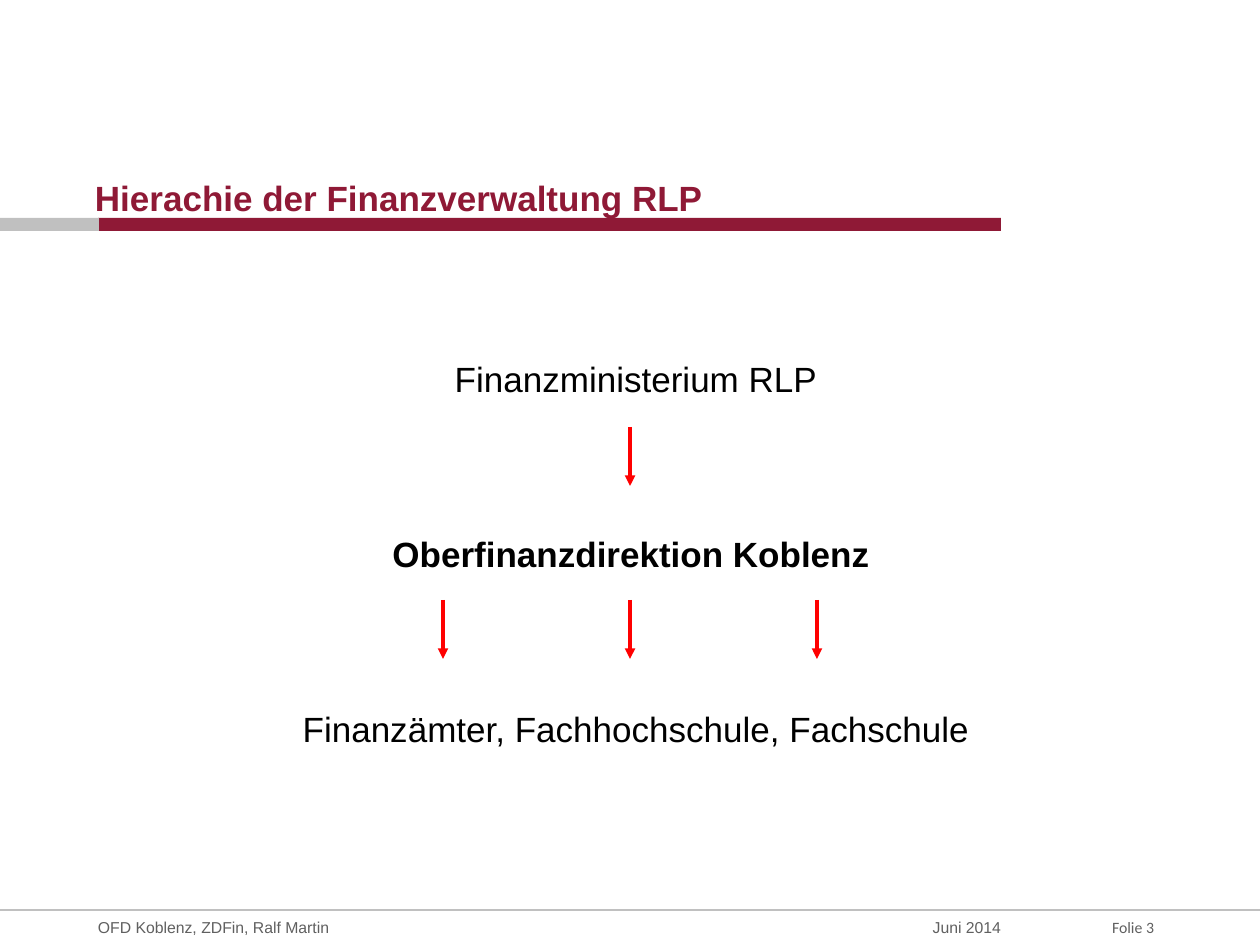
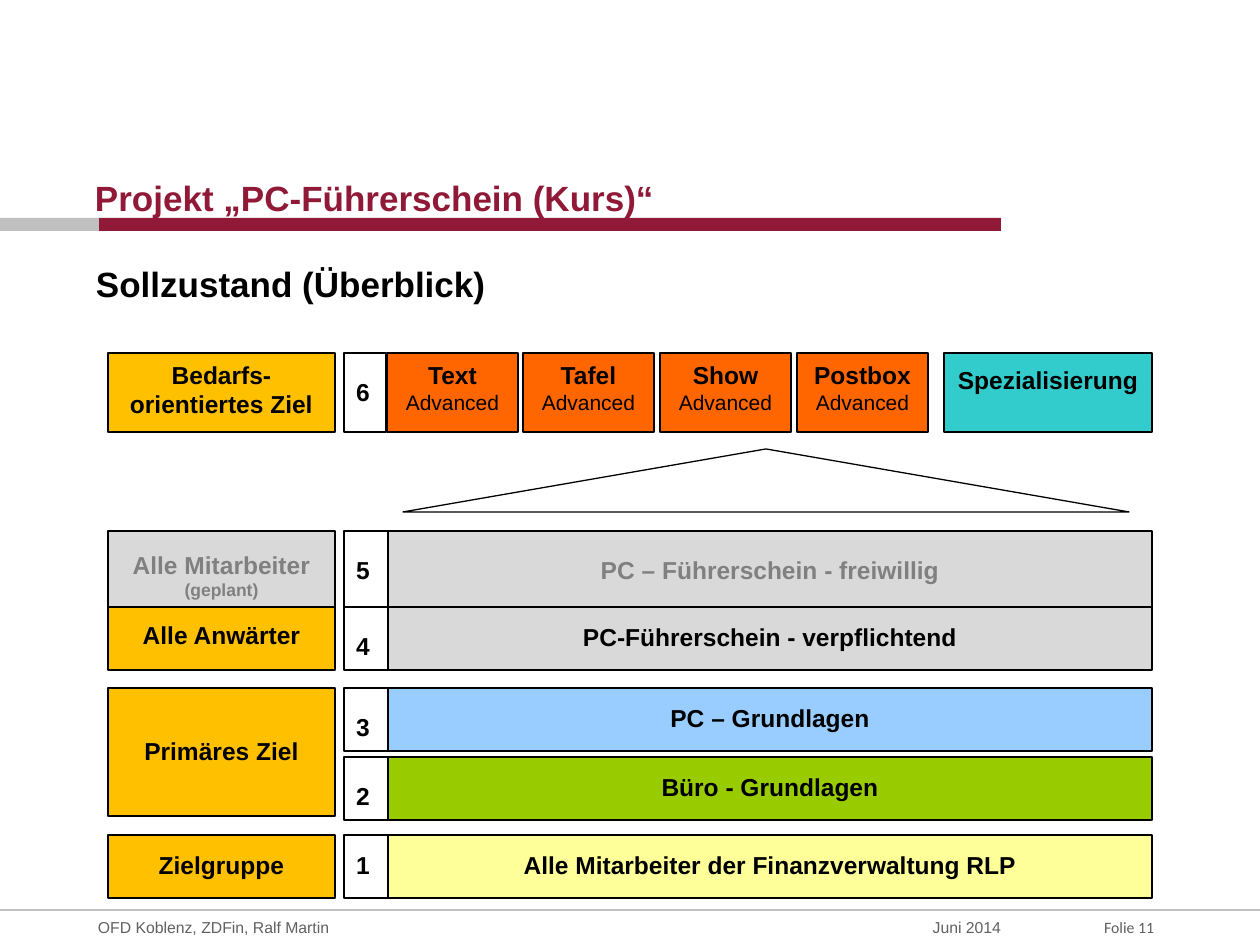
"""Builds two slides on the Rhineland tax office and its computer licence plan."""
import dataclasses

import lxml.etree
import pptx
import pptx.dml.color
import pptx.enum.shapes
import pptx.enum.text
import pptx.oxml.ns
import pptx.util

ALIGN = pptx.enum.text.PP_ALIGN
ANCHOR = pptx.enum.text.MSO_ANCHOR
SHAPE = pptx.enum.shapes.MSO_SHAPE


@dataclasses.dataclass(frozen=True)
class Theme:
    wine: str = "8F1936"
    silver: str = "C0C0C0"
    slate: str = "606060"
    black: str = "000000"
    white: str = "FFFFFF"
    red: str = "FF0000"
    pale: str = "D9D9D9"
    grey: str = "808080"
    gold: str = "FFC000"
    orange: str = "FF6600"
    teal: str = "33CCCC"
    sky: str = "99CCFF"
    green: str = "99CC00"
    cream: str = "FFFF99"
    font: str = "Arial"
    folio: str = "Calibri"
    head: int = 20
    label: int = 14
    sub: int = 12
    note: int = 10
    foot: int = 9


def px(n):
    return pptx.util.Emu(round(n * 914400 / 126))


def rgb(code):
    return pptx.dml.color.RGBColor.from_string(code)


class Deck:
    def __init__(self, theme):
        self.theme = theme
        self.show = pptx.Presentation()
        self.show.slide_width, self.show.slide_height = px(1260), px(945)
        self.slide = None

    def page(self, title, num):
        t = self.theme
        self.slide = self.show.slides.add_slide(self.show.slide_layouts[6])
        self.box(98, 218, 903, 13, t.wine)
        self.box(0, 218, 99, 13, t.silver)
        self.line(0, 910, 1260, 910, t.silver, 0.75)
        self.foot(98, 694, "OFD Koblenz, ZDFin, Ralf Martin", ALIGN.LEFT, t.font)
        self.foot(828, 173, "Juni 2014", ALIGN.RIGHT, t.font)
        self.foot(1000, 154, f"Folie {num}", ALIGN.RIGHT, t.folio)
        self.head(95, 176, title, t.wine)

    def head(self, x, y, text, ink):
        self.text(x, y, 980, 42, [[(text, self.theme.head, True)]], ink,
                  ALIGN.LEFT, ANCHOR.BOTTOM)

    def foot(self, x, w, text, align, font):
        self.text(x, 910, w, 35, [[(text, self.theme.foot, False)]],
                  self.theme.slate, align, ANCHOR.MIDDLE, font)

    def text(self, x, y, w, h, paras, ink, align, anchor, font=None, gap=0):
        item = self.slide.shapes.add_textbox(px(x), px(y), px(w), px(h))
        self.fill(item.text_frame, paras, ink, align, anchor, (0, 0, 0, 0), font, gap)

    def fill(self, frame, paras, ink, align, anchor, pads, font=None, gap=0):
        frame.word_wrap = True
        frame.vertical_anchor = anchor
        (frame.margin_left, frame.margin_top,
         frame.margin_right, frame.margin_bottom) = map(px, pads)
        for i, runs in enumerate(paras):
            para = frame.add_paragraph() if i else frame.paragraphs[0]
            para.alignment = align
            if i and gap:
                para.space_before = pptx.util.Pt(gap)
            for words, size, bold in runs:
                run = para.add_run()
                run.text = words
                run.font.name = font or self.theme.font
                run.font.size = pptx.util.Pt(size)
                run.font.bold = bold
                run.font.color.rgb = rgb(ink)

    def box(self, x, y, w, h, fill=None, edge=None, kind=SHAPE.RECTANGLE):
        item = self.slide.shapes.add_shape(kind, px(x), px(y), px(w), px(h))
        item.shadow.inherit = False
        if fill:
            item.fill.solid()
            item.fill.fore_color.rgb = rgb(fill)
        else:
            item.fill.background()
        if edge:
            item.line.color.rgb = rgb(edge)
            item.line.width = pptx.util.Pt(0.75)
        else:
            item.line.fill.background()
        return item

    def cell(self, x, y, w, h, fill, paras, top, ink=None, align=ALIGN.CENTER):
        item = self.box(x, y, w, h, fill, self.theme.black)
        self.fill(item.text_frame, paras, ink or self.theme.black, align,
                  ANCHOR.TOP, (12, top, 12, 0))

    def line(self, x1, y1, x2, y2, ink, width, arrow=False):
        item = self.slide.shapes.add_connector(
            pptx.enum.shapes.MSO_CONNECTOR.STRAIGHT, px(x1), px(y1), px(x2), px(y2))
        item.line.color.rgb = rgb(ink)
        item.line.width = pptx.util.Pt(width)
        qn = pptx.oxml.ns.qn
        if arrow:
            lxml.etree.SubElement(item.line._get_or_add_ln(), qn("a:tailEnd"),
                                  type="triangle")
        lxml.etree.SubElement(item._element.spPr, qn("a:effectLst"))


def ranks(deck):
    t = deck.theme
    deck.page("Hierachie der Finanzverwaltung RLP", 3)
    tiers = [("Finanzministerium RLP", False),
             ("Oberfinanzdirektion Koblenz ", True),
             ("Finanzämter, Fachhochschule, Fachschule", False)]
    deck.text(97, 357, 1078, 400, [[(name, t.head, bold)] for name, bold in tiers],
              t.black, ALIGN.CENTER, ANCHOR.TOP, gap=76)
    for x, y in [(630, 427), (630, 600), (817, 600), (443, 600)]:
        deck.line(x, y, x, y + 59, t.red, 2, True)


def plan(deck):
    t = deck.theme
    deck.page("Projekt „PC-Führerschein (Kurs)“", 11)
    deck.head(96, 262, "Sollzustand (Überblick)", t.black)

    def bold(text):
        return [(text, t.label, True)]

    rows = [
        ("5", "PC – Führerschein - freiwillig", 531, 78, t.pale, t.grey, 24, 24),
        ("4", "PC-Führerschein - verpflichtend", 607, 63, t.pale, t.black, 24, 15),
        ("3", "PC – Grundlagen", 688, 63, t.sky, t.black, 24, 15),
        ("2", "Büro - Grundlagen", 757, 63, t.green, t.black, 24, 15),
        ("1", "Alle Mitarbeiter der Finanzverwaltung RLP", 835, 63, t.cream,
         t.black, 15, 15),
    ]
    for num, name, y, h, fill, ink, low, top in rows:
        deck.cell(388, y, 764, h, fill, [bold(name)], top, ink)
        deck.cell(344, y, 44, h, t.white, [bold(num)], low, align=ALIGN.LEFT)

    goals = [
        ([bold("Alle Mitarbeiter"), [("(geplant)", t.note, True)]],
         531, 78, t.pale, t.grey, 19),
        ([bold("Alle Anwärter")], 607, 63, t.gold, t.black, 13),
        ([bold("Bedarfs-orientiertes Ziel")], 353, 79, t.gold, t.black, 7),
        ([bold("Primäres Ziel")], 688, 128, t.gold, t.black, 48),
        ([bold("Zielgruppe")], 835, 63, t.gold, t.black, 15),
    ]
    for paras, y, h, fill, ink, top in goals:
        deck.cell(108, y, 227, h, fill, paras, top, ink)

    for i, name in enumerate(["Text", "Tafel", "Show", "Postbox"]):
        deck.cell(387 + i * 410 // 3, 353, 131, 79, t.orange,
                  [bold(name), [("Advanced", t.sub, False)]], 7)
    deck.cell(944, 353, 208, 79, t.teal, [bold("Spezialisierung")], 12)
    deck.cell(344, 353, 42, 79, t.white, [bold("6")], 24, align=ALIGN.LEFT)
    deck.box(403, 449, 726, 63, None, t.black, SHAPE.ISOSCELES_TRIANGLE)


def main():
    deck = Deck(Theme())
    ranks(deck)
    plan(deck)
    deck.show.save("out.pptx")


if __name__ == "__main__":
    main()
